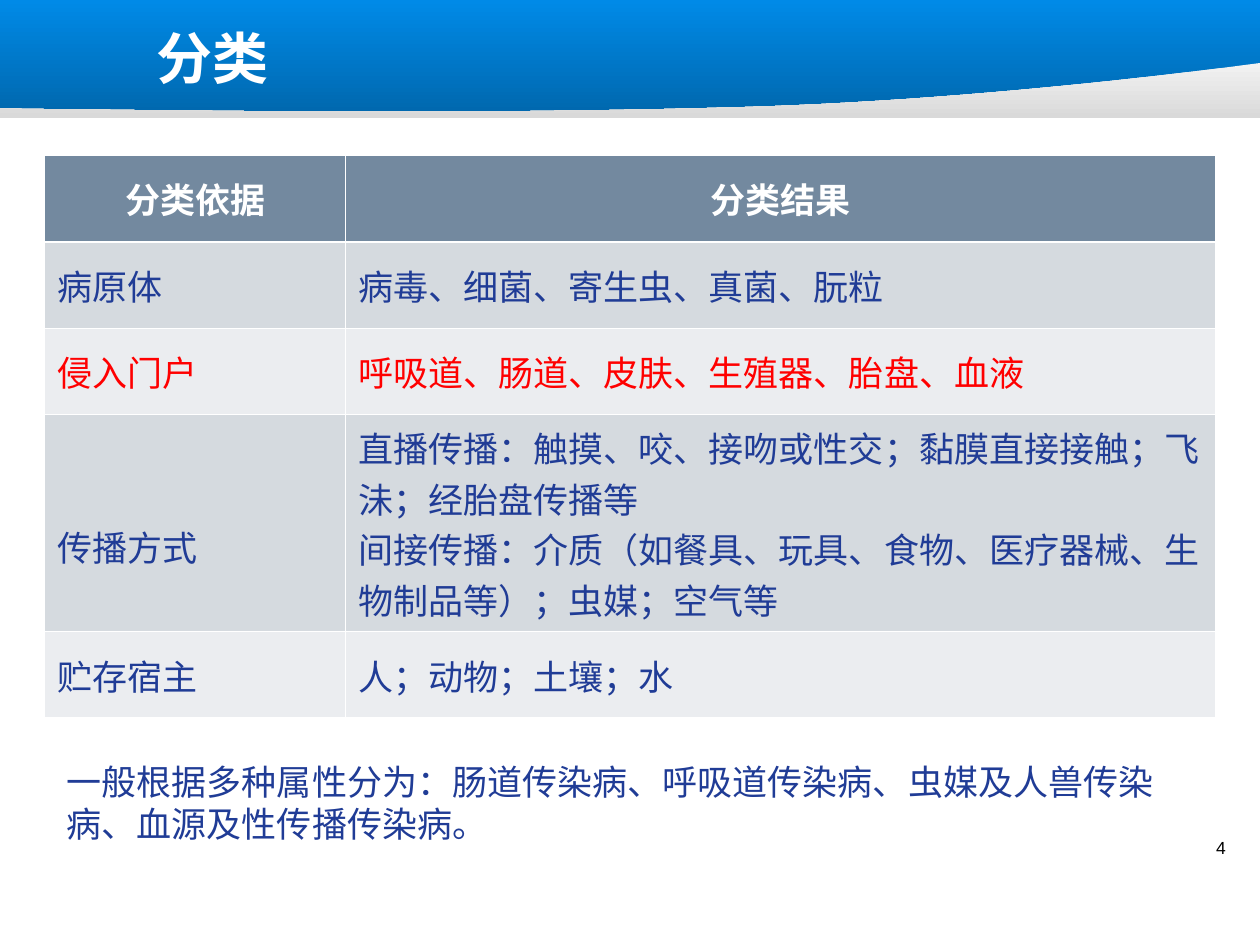
"""Build the slide that classifies infectious diseases."""
from dataclasses import dataclass

from lxml.etree import SubElement
from pptx import Presentation
from pptx.dml.color import RGBColor
from pptx.enum.shapes import MSO_SHAPE
from pptx.enum.text import MSO_ANCHOR, PP_ALIGN
from pptx.oxml.ns import qn
from pptx.util import Pt

TITLE = "分类"
ROWS = [
    ("分类依据", "分类结果"),
    ("病原体", "病毒、细菌、寄生虫、真菌、朊粒"),
    ("侵入门户", "呼吸道、肠道、皮肤、生殖器、胎盘、血液"),
    ("传播方式", "直播传播：触摸、咬、接吻或性交；黏膜直接接触；飞沬；经胎盘传播等\n"
                 "间接传播：介质（如餐具、玩具、食物、医疗器械、生物制品等）；虫媒；空气等"),
    ("贮存宿主", "人；动物；土壤；水"),
]
HIGHLIGHT_ROW, TALL_ROW = 2, 3
SUMMARY = "一般根据多种属性分为：肠道传染病、呼吸道传染病、虫媒及人兽传染病、血源及性传播传染病。"
PAGE = "4"

COL_WIDTHS = (172, 497)
ROW_HEIGHT, TALL_HEIGHT = 49.4, 124
WAVE = [
    ((-1.4, 62), (166, 64), (281.5, 65), (417.6, 61.4)),
    ((417.6, 61.4), (554, 58), (690, 40), (720, 36)),
]
WAVE_BASE = [(720, 67.5), (0, 67.5)]
STEPS = 24


@dataclass(frozen=True)
class Theme:
    latin: str = "Arial"
    cjk: str = "Noto Sans CJK SC"
    title_size: int = 32
    body_size: int = 20
    page_size: int = 10
    white: str = "FFFFFF"
    black: str = "000000"
    text: str = "203C96"
    accent: str = "FF0000"
    header: str = "73899F"
    bands: tuple = ("D5DADF", "EBEDF0")
    banner: tuple = ("008AE7", "0067AD")
    wave: tuple = ("F2F2F2", "D9D9D9")


T = Theme()


def style(p, size, color, bold=False, align=PP_ALIGN.LEFT, latin=T.latin):
    p.alignment = align
    font = p.font
    font.size, font.bold, font.name = Pt(size), bold, latin
    font.color.rgb = RGBColor.from_string(color)
    ea = SubElement(p._p.pPr.find(qn("a:defRPr")), qn("a:ea"))
    ea.set("typeface", T.cjk)


def paint(sp, colors):
    sp.shadow.inherit = False
    sp.line.fill.background()
    sp.fill.gradient()
    sp.fill.gradient_angle = 270
    for stop, color in zip(sp.fill.gradient_stops, colors):
        stop.color.rgb = RGBColor.from_string(color)


def bezier(points, t):
    weights = ((1 - t) ** 3, 3 * t * (1 - t) ** 2, 3 * t * t * (1 - t), t ** 3)
    return tuple(sum(w * pt[i] for w, pt in zip(weights, points)) for i in (0, 1))


def add_banner(shapes):
    bar = shapes.add_shape(MSO_SHAPE.RECTANGLE, 0, 0, Pt(720), Pt(66))
    paint(bar, T.banner)
    curve = [bezier(seg, n / STEPS) for seg in WAVE for n in range(1, STEPS + 1)]
    x, y = WAVE[0][0]
    outline = shapes.build_freeform(Pt(x), Pt(y))
    outline.add_line_segments([(Pt(x), Pt(y)) for x, y in curve + WAVE_BASE])
    paint(outline.convert_to_shape(), T.wave)


def add_title(shapes):
    title = shapes.title
    title.left, title.top, title.width, title.height = Pt(82), Pt(10), Pt(602), Pt(45)
    tf = title.text_frame
    tf.text = TITLE
    tf.vertical_anchor = MSO_ANCHOR.MIDDLE
    style(tf.paragraphs[0], T.title_size, T.white, bold=True, latin=T.cjk)
    shapes._spTree.append(title._element)


def add_table(shapes):
    heights = [TALL_HEIGHT if i == TALL_ROW else ROW_HEIGHT for i in range(len(ROWS))]
    table = shapes.add_table(len(ROWS), len(COL_WIDTHS), Pt(25.5), Pt(88.8),
                             Pt(sum(COL_WIDTHS)), Pt(sum(heights))).table
    for col, width in zip(table.columns, COL_WIDTHS):
        col.width = Pt(width)
    for i, (texts, height) in enumerate(zip(ROWS, heights)):
        table.rows[i].height = Pt(height)
        head = i == 0
        fill = T.header if head else T.bands[(i - 1) % 2]
        color = T.white if head else T.accent if i == HIGHLIGHT_ROW else T.text
        align = PP_ALIGN.CENTER if head else PP_ALIGN.LEFT
        for cell, text in zip(table.rows[i].cells, texts):
            cell.text = text
            cell.vertical_anchor = MSO_ANCHOR.MIDDLE
            cell.fill.solid()
            cell.fill.fore_color.rgb = RGBColor.from_string(fill)
            for p in cell.text_frame.paragraphs:
                style(p, T.body_size, color, head, align)
    table.cell(TALL_ROW, 0).margin_top = Pt(30)


def add_text(shapes, text, box, size, color, align=PP_ALIGN.LEFT):
    tf = shapes.add_textbox(*map(Pt, box)).text_frame
    tf.word_wrap = True
    tf.text = text
    style(tf.paragraphs[0], size, color, align=align)
    return tf


def main():
    prs = Presentation()
    prs.slide_width, prs.slide_height = Pt(720), Pt(540)
    shapes = prs.slides.add_slide(prs.slide_layouts[5]).shapes
    add_banner(shapes)
    add_title(shapes)
    add_text(shapes, PAGE, (649.5, 474.5, 96.5, 28), T.page_size, T.black, PP_ALIGN.CENTER)
    add_table(shapes)
    summary = add_text(shapes, SUMMARY, (31, 428.4, 641, 55.4), T.body_size, T.text)
    summary.margin_top = Pt(6)
    summary.paragraphs[0].line_spacing = Pt(24)
    prs.save("out.pptx")


if __name__ == "__main__":
    main()
